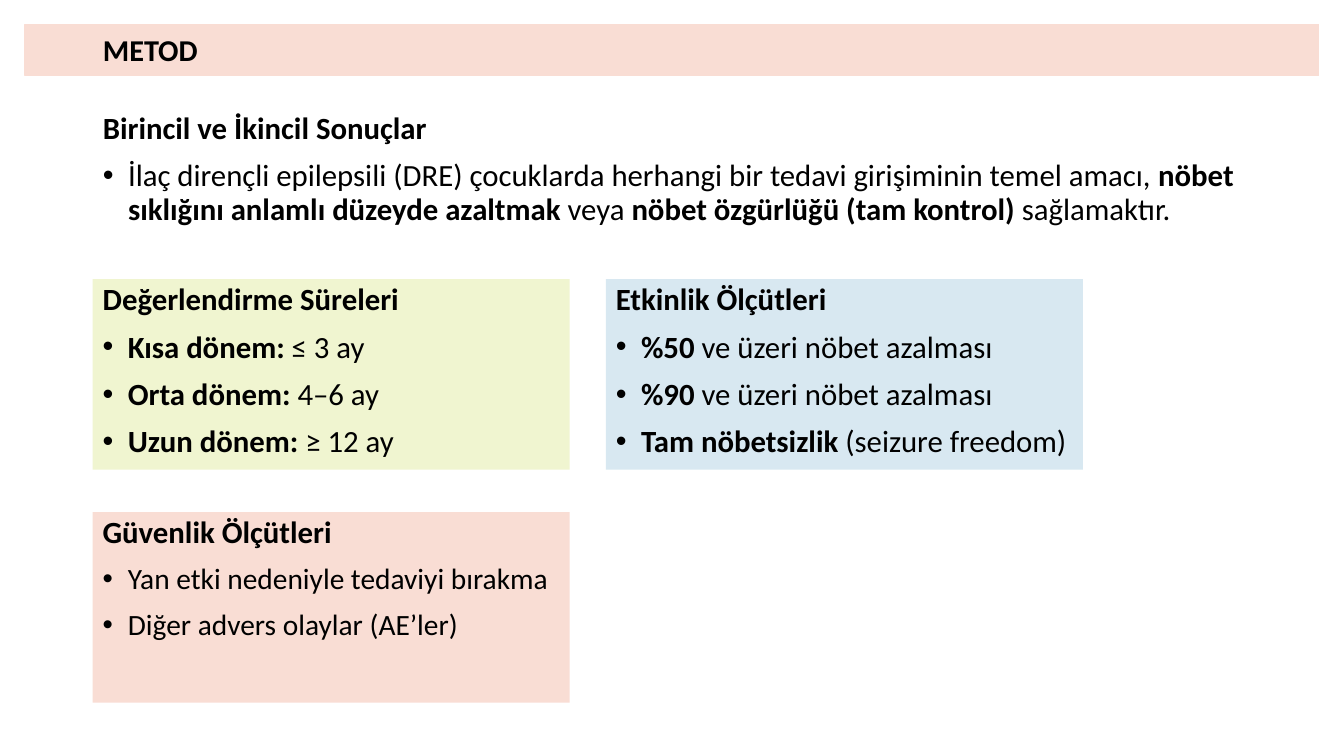
"""Build the METOD slide on primary and secondary outcomes."""
import pptx
import pptx.dml.color
import pptx.enum.shapes
import pptx.enum.text
import pptx.oxml
import pptx.oxml.ns
import pptx.util
from pptx.util import Inches

COLOURS = {"text": "000000", "rose": "F9DDD4", "lime": "F0F5D0", "sky": "D8E8F1"}
BOX_WIDTH, BOX_HEIGHT = 4.73, 1.89
LEFT, RIGHT = 0.92, 6.01
UPPER, LOWER = 2.77, 5.08

OUTCOMES = (
    "Birincil ve İkincil Sonuçlar",
    ["İlaç dirençli epilepsili (DRE) çocuklarda herhangi bir tedavi girişiminin temel amacı, "
     "*nöbet sıklığını anlamlı düzeyde azaltmak* veya *nöbet özgürlüğü (tam kontrol)* sağlamaktır."],
)
BOXES = [
    (LEFT, UPPER, "lime", 22, "Değerlendirme Süreleri",
     ["*Kısa dönem:* ≤ 3 ay", "*Orta dönem:* 4–6 ay", "*Uzun dönem:* ≥ 12 ay"]),
    (RIGHT, UPPER, "sky", 22, "Etkinlik Ölçütleri",
     ["*%50 *ve üzeri nöbet azalması", "*%90 *ve üzeri nöbet azalması",
      "*Tam nöbetsizlik *(seizure freedom)"]),
    (LEFT, LOWER, "rose", 21, "Güvenlik Ölçütleri",
     ["Yan etki nedeniyle tedaviyi bırakma", "Diğer advers olaylar (AE’ler)"]),
]


def colour(name):
    """Return the named colour."""
    return pptx.dml.color.RGBColor.from_string(COLOURS[name])


def apply(target, values):
    """Set each attribute in values on target."""
    for name, value in values.items():
        setattr(target, name, value)


def place(shape, left, top, width, height):
    """Move and size a shape, in inches."""
    apply(shape, {"left": Inches(left), "top": Inches(top),
                  "width": Inches(width), "height": Inches(height)})


def prepare_frame(frame, anchor):
    """Set wrapping, anchoring and insets of a text frame."""
    apply(frame, {"word_wrap": True, "vertical_anchor": anchor,
                  "auto_size": pptx.enum.text.MSO_AUTO_SIZE.NONE,
                  "margin_left": Inches(0.1), "margin_right": Inches(0.1),
                  "margin_top": Inches(0.05), "margin_bottom": Inches(0.05)})


def set_bullet(para, bulleted):
    """Give a paragraph a hanging bullet, or none."""
    properties = para._p.get_or_add_pPr()
    indent = Inches(0.25) if bulleted else 0
    properties.set("marL", str(indent))
    properties.set("indent", str(-indent))
    namespace = pptx.oxml.ns.nsdecls("a")
    if bulleted:
        markup = [f'<a:buFont {namespace} typeface="Arial"/>', f'<a:buChar {namespace} char="•"/>']
    else:
        markup = [f"<a:buNone {namespace}/>"]
    for element in markup:
        properties.append(pptx.oxml.parse_xml(element))


def write_para(para, text, size, before=0, bulleted=False):
    """Write text whose parts between asterisks are bold."""
    set_bullet(para, bulleted)
    apply(para, {"line_spacing": 0.9, "space_before": pptx.util.Pt(before),
                 "space_after": pptx.util.Pt(0),
                 "alignment": pptx.enum.text.PP_ALIGN.LEFT})
    for index, part in enumerate(text.split("*")):
        if part:
            span = para.add_run()
            span.text = part
            apply(span.font, {"name": "Calibri", "size": pptx.util.Pt(size), "bold": index % 2 == 1})
            span.font.color.rgb = colour("text")


def write_list(frame, heading, items, size=22):
    """Write a bold heading followed by bulleted items."""
    prepare_frame(frame, pptx.enum.text.MSO_ANCHOR.TOP)
    write_para(frame.paragraphs[0], f"*{heading}*", 22)
    for item in items:
        write_para(frame.add_paragraph(), item, size, before=10, bulleted=True)


def add_block(page, left, top, width, height, fill):
    """Add a flat filled rectangle."""
    block = page.shapes.add_shape(pptx.enum.shapes.MSO_SHAPE.RECTANGLE, Inches(left),
                                  Inches(top), Inches(width), Inches(height))
    block.shadow.inherit = False
    block.fill.solid()
    block.fill.fore_color.rgb = colour(fill)
    block.line.fill.background()
    return block


def add_banner(page):
    """Add the title band behind the placeholders."""
    banner = add_block(page, 0.25, 0.24, 12.83, 0.51, "rose")
    banner.line.color.rgb = colour("rose")
    banner.line.width = pptx.util.Pt(1)
    page.shapes.title.element.addprevious(banner.element)


def main():
    """Build and save the deck."""
    deck = pptx.Presentation()
    deck.slide_width, deck.slide_height = Inches(13.33), Inches(7.5)
    page = deck.slides.add_slide(deck.slide_layouts[1])
    add_banner(page)

    title, body = page.shapes.title, page.placeholders[1]
    place(title, LEFT, 0.31, 11.5, 0.4)
    prepare_frame(title.text_frame, pptx.enum.text.MSO_ANCHOR.MIDDLE)
    write_para(title.text_frame.paragraphs[0], "*METOD*", 21.6)
    place(body, LEFT, 1.07, 11.5, 1.35)
    write_list(body.text_frame, *OUTCOMES)

    for left, top, fill, size, heading, items in BOXES:
        box = add_block(page, left, top, BOX_WIDTH, BOX_HEIGHT, fill)
        write_list(box.text_frame, heading, items, size)
    deck.save("out.pptx")


if __name__ == "__main__":
    main()
